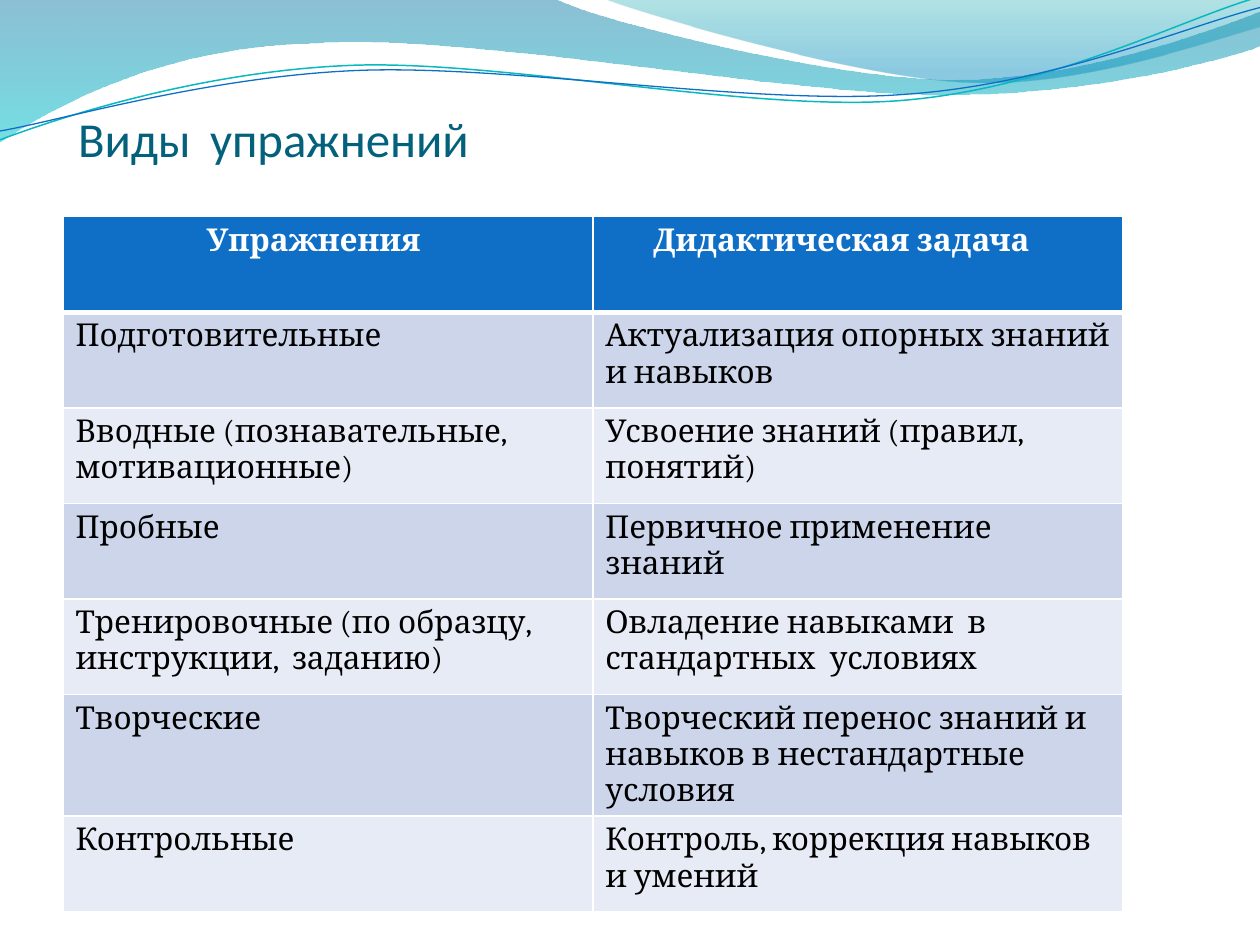
from lxml import etree
from pptx import Presentation
from pptx import util as u
from pptx.dml.color import RGBColor
from pptx.enum import text
from pptx.oxml.ns import qn

Inches, Pt = u.Inches, u.Pt
COLORS = {
    "title": "04617B", "header": "0F6FC6", "odd": "CCD5EA", "even": "E7EBF5",
    "white": "FFFFFF", "black": "000000", "teal_line": "0AB8BF",
    "wave_top": "0074A1", "wave_bottom": "00C6CF",
    "crest_top": "00A1A9", "crest_bottom": "008BBF",
}


def color(name):
    return RGBColor.from_string(COLORS[name])


def add_curve(slide, start, segments, closed):
    """Draw straight (2 numbers) and cubic Bezier (6 numbers) segments."""
    points = [(Inches(segment[i]), Inches(segment[i + 1]))
              for segment in segments for i in range(0, len(segment), 2)]
    builder = slide.shapes.build_freeform(
        Inches(start[0]), Inches(start[1]), scale=1.0)
    builder.add_line_segments(points, close=closed)
    shape = builder.convert_to_shape()
    shape.shadow.inherit = False
    # Join each three points of a Bezier segment into one curve
    lines = iter(list(shape._element.iter(qn("a:lnTo"))))
    for segment in segments:
        group = [next(lines) for _ in range(len(segment) // 2)]
        if len(group) == 3:
            curve = etree.Element(qn("a:cubicBezTo"))
            group[0].addprevious(curve)
            for line in group:
                curve.append(line[0])
                line.getparent().remove(line)
    return shape


presentation = Presentation()
presentation.slide_width, presentation.slide_height = Inches(10), Inches(7.5)
slide = presentation.slides.add_slide(presentation.slide_layouts[5])

# Gradient waves along the top: start, segments, (color, position, opacity)
waves = [
    ((0, 0),
     [(4.4, -0.01), (4.76, 0.17, 6.64, 0.63, 7.58, 0.63),
      (8.53, 0.63, 9.58, 0.26, 10, 0.09), (10.01, 0.36),
      (9.83, 0.44, 8.7, 0.76, 7.46, 0.75),
      (6.22, 0.75, 3.82, 0.28, 2.57, 0.34),
      (1.29, 0.36, 0.46, 0.83, -0.01, 1.13), (0, 0)],
     [("wave_top", 0, 45), ("wave_bottom", 1, 55)]),
    ((4.79, -0.01),
     [(5.09, 0.11, 6.82, 0.62, 7.69, 0.65),
      (8.56, 0.69, 9.61, 0.32, 10, 0.21), (10, 0), (4.79, -0.01)],
     [("crest_top", 0, 30), ("crest_bottom", 0.8, 45)]),
]
for start, segments, stops in waves:
    wave = add_curve(slide, start, segments, True)
    wave.line.fill.background()
    wave.fill.gradient()
    wave.fill.gradient_angle = 270
    for stop, (name, position, _) in zip(wave.fill.gradient_stops, stops):
        stop.color.rgb = color(name)
        stop.position = position
    for element, (_, _, opacity) in zip(wave._element.iter(qn("a:srgbClr")), stops):
        etree.SubElement(element, qn("a:alpha"), val=str(opacity * 1000))

# Thin wave lines
wave_lines = [
    ("teal_line", 0.85, (0, 1.11),
     [(0.48, 0.93, 1.58, 0.57, 2.77, 0.52),
      (3.95, 0.47, 5.93, 0.89, 7.13, 0.8),
      (8.33, 0.71, 9.38, 0.15, 9.98, -0.02)]),
    ("header", 0.75, (0, 1.04),
     [(0.47, 0.96, 1.64, 0.61, 2.83, 0.56),
      (4.03, 0.51, 5.97, 0.84, 7.17, 0.75),
      (8.36, 0.67, 9.41, 0.21, 10, 0.06)]),
]
for name, width, start, segments in wave_lines:
    wave_line = add_curve(slide, start, segments, False)
    wave_line.fill.background()
    wave_line.line.color.rgb = color(name)
    wave_line.line.width = Pt(width)

# Title, in front of the waves
title = slide.shapes.title
slide.shapes._spTree.append(title._element)
title.left, title.top = Inches(0.55), Inches(0.86)
title.width, title.height = Inches(7.27), Inches(0.47)
frame = title.text_frame
frame.auto_size = text.MSO_AUTO_SIZE.NONE
frame.word_wrap = True
frame.vertical_anchor = text.MSO_ANCHOR.BOTTOM
frame.margin_left, frame.margin_right = Inches(0.07), 0
frame.margin_top, frame.margin_bottom = Inches(0.05), 0
paragraph = frame.paragraphs[0]
paragraph.alignment = text.PP_ALIGN.LEFT
for words, size in [("Виды ", 27.9), (" ", 21.6), ("упражнений", 27.9)]:
    run = paragraph.add_run()
    run.text = words
    run.font.name, run.font.size = "Calibri", Pt(size)
    run.font.color.rgb = color("title")

# Table of exercises
rows = [
    ("Упражнения", "Дидактическая задача"),
    ("Подготовительные", "Актуализация опорных знаний и навыков"),
    ("Вводные (познавательные, мотивационные)",
     "Усвоение знаний (правил, понятий)"),
    ("Пробные", "Первичное применение знаний"),
    ("Тренировочные (по образцу, инструкции,  заданию)",
     "Овладение навыками  в стандартных  условиях"),
    ("Творческие",
     "Творческий перенос знаний и навыков в нестандартные условия"),
    ("Контрольные", "Контроль, коррекция навыков и умений"),
]
header_indents = [1.14, 0.48]
# add_table shares the width and height equally among columns and rows
table = slide.shapes.add_table(
    len(rows), 2, Inches(0.5), Inches(1.72), Inches(8.41), Inches(5.31)).table
for row_index, row in enumerate(rows):
    is_header = row_index == 0
    fill_name = "header" if is_header else ("even", "odd")[row_index % 2]
    for column_index, words in enumerate(row):
        cell = table.cell(row_index, column_index)
        properties = cell._tc.get_or_add_tcPr()
        for side in "LRTB":
            thick = (is_header and side == "B") or (row_index == 1 and side == "T")
            border = etree.SubElement(
                properties, qn("a:ln" + side), w=str(Pt(3 if thick else 1)))
            solid = etree.SubElement(border, qn("a:solidFill"))
            etree.SubElement(solid, qn("a:srgbClr"), val=COLORS["white"])
        cell.fill.solid()
        cell.fill.fore_color.rgb = color(fill_name)
        if is_header:
            cell.margin_left = Inches(header_indents[column_index])
        run = cell.text_frame.paragraphs[0].add_run()
        run.text = words
        run.font.name, run.font.size = "Cambria", Pt(18)
        run.font.bold = is_header
        run.font.color.rgb = color("white" if is_header else "black")

presentation.save("out.pptx")
